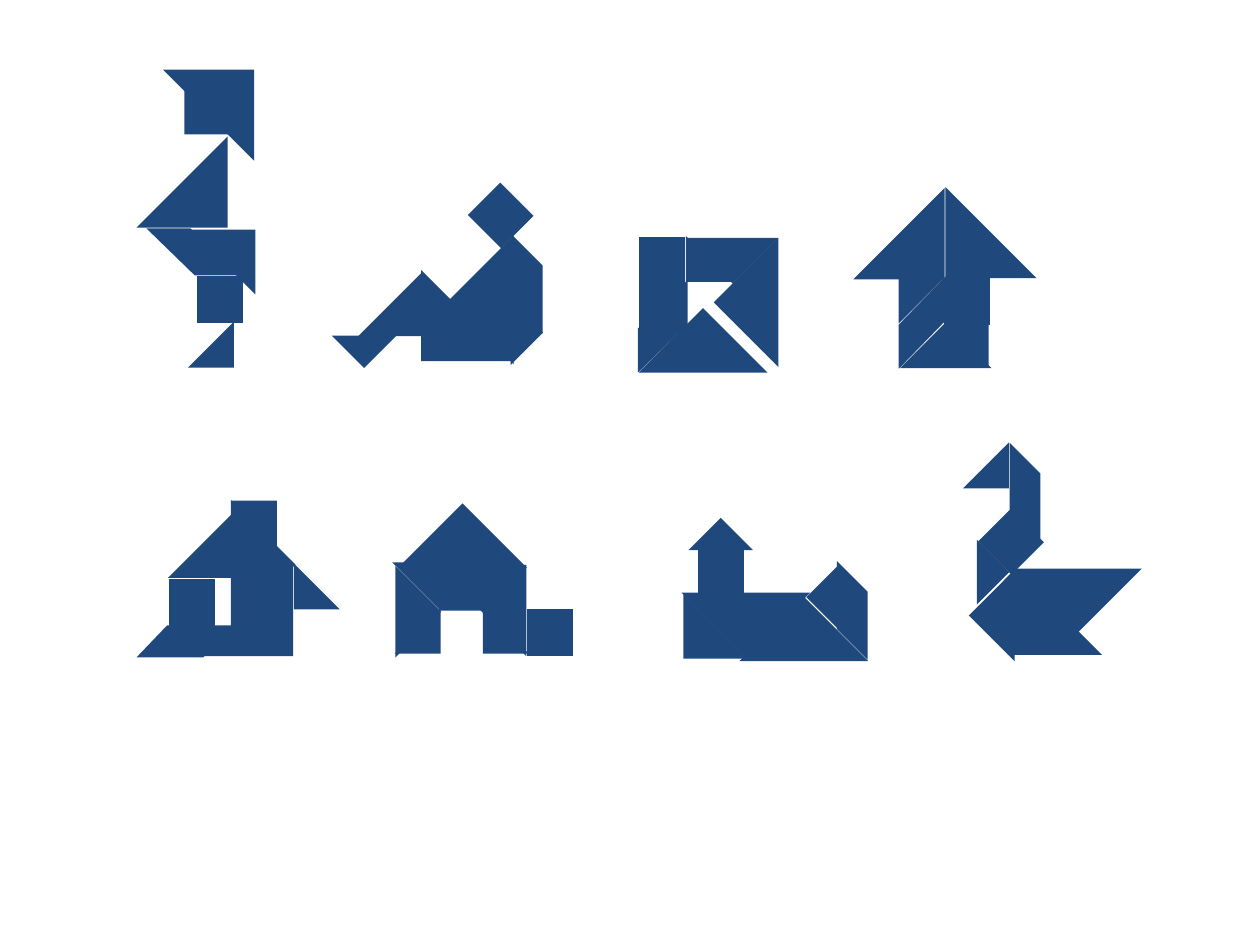
"""Build a slide of eight tangram figures, each made of seven pieces."""
from dataclasses import dataclass
from enum import Enum
from typing import NamedTuple, Union

from lxml.etree import SubElement
from pptx import Presentation
from pptx.dml.color import RGBColor
from pptx.enum.shapes import MSO_SHAPE
from pptx.oxml.ns import qn
from pptx.shapes.autoshape import Shape
from pptx.util import Inches, Pt


@dataclass(frozen=True)
class Theme:
    """Colour and outline shared by all pieces."""
    piece: RGBColor = RGBColor(0x1F, 0x49, 0x7D)
    outline: Pt = Pt(1)


class Tan(Enum):
    """Preset outline, width and height of a tangram piece."""
    LARGE = (MSO_SHAPE.RIGHT_TRIANGLE, 0.7, 0.7)
    MEDIUM = (MSO_SHAPE.RIGHT_TRIANGLE, 0.49, 0.49)
    SMALL = (MSO_SHAPE.RIGHT_TRIANGLE, 0.34, 0.34)
    SQUARE = (MSO_SHAPE.RECTANGLE, 0.35, 0.36)


class Piece(NamedTuple):
    """A triangle or square with its place and turn."""
    tan: Tan
    left: float
    top: float
    rotation: int = 0
    flipped: bool = False


class Parallelogram(NamedTuple):
    """The slanted piece, given by its corners."""
    corners: tuple[tuple[float, float], ...]


Figure = list[Union[Piece, Parallelogram]]

THEME = Theme()

SITTING_PERSON: Figure = [
    Piece(Tan.LARGE, 3.72, 2.03, 45),
    Piece(Tan.SMALL, 2.72, 2.5, 45, True),
    Piece(Tan.SQUARE, 3.8, 1.53, 315),
    Piece(Tan.MEDIUM, 2.86, 2.17, 270),
    Piece(Tan.LARGE, 3.35, 2.16),
    Piece(Tan.SMALL, 3.89, 2.47, 225),
    Parallelogram(((4.3, 2.63), (4.3, 2.11), (4.07, 1.88), (4.07, 2.4))),
]
STANDING_PERSON: Figure = [
    Piece(Tan.SQUARE, 1.57, 2.2),
    Piece(Tan.LARGE, 1.31, 0.56, 180),
    Piece(Tan.MEDIUM, 1.53, 1.83, 180),
    Piece(Tan.LARGE, 1.1, 1.1, 270),
    Piece(Tan.SMALL, 1.47, 0.72),
    Piece(Tan.SMALL, 1.51, 2.57, 0, True),
    Parallelogram(((1.18, 1.82), (1.55, 2.18), (1.88, 2.18), (1.51, 1.82))),
]
FRAMED_ARROW: Figure = [
    Piece(Tan.SQUARE, 5.08, 1.89),
    Piece(Tan.LARGE, 5.82, 2.05, 45),
    Piece(Tan.MEDIUM, 5.57, 1.65, 315),
    Piece(Tan.LARGE, 5.23, 2.6, 135),
    Piece(Tan.SMALL, 5.45, 1.89),
    Piece(Tan.SMALL, 5.08, 2.26, 180, True),
    Parallelogram(((5.07, 2.94), (5.45, 2.57), (5.45, 2.24), (5.07, 2.61))),
]
UP_ARROW: Figure = [
    Piece(Tan.MEDIUM, 7.26, 2.67, 225, True),
    Piece(Tan.SQUARE, 7.5, 2.21),
    Piece(Tan.LARGE, 7.51, 1.5),
    Piece(Tan.LARGE, 6.79, 1.51, 270),
    Piece(Tan.SMALL, 7.5, 2.56, 180),
    Piece(Tan.SMALL, 7.14, 2.21, 180, True),
    Parallelogram(((7.14, 2.91), (7.5, 2.54), (7.5, 2.21), (7.14, 2.58))),
]
CHIMNEY_HOUSE: Figure = [
    Piece(Tan.MEDIUM, 1.35, 4.09, 0, True),
    Piece(Tan.SQUARE, 1.35, 4.6),
    Piece(Tan.LARGE, 1.49, 4.13, 225),
    Piece(Tan.LARGE, 1.62, 4.5, 270),
    Piece(Tan.SMALL, 1.85, 3.98, 180),
    Piece(Tan.SMALL, 2.34, 4.49, 90, True),
    Parallelogram(((1.1, 5.21), (1.61, 5.21), (1.85, 4.97), (1.33, 4.97))),
]
GATE_HOUSE: Figure = [
    Piece(Tan.SQUARE, 4.19, 4.84),
    Piece(Tan.LARGE, 3.32, 4.15, 135),
    Piece(Tan.LARGE, 3.47, 4.49, 180),
    Piece(Tan.SMALL, 3.15, 4.84, 270),
    Piece(Tan.SMALL, 3.84, 4.84, 90, True),
    Parallelogram(((3.13, 4.47), (3.5, 4.84), (3.83, 4.84), (3.46, 4.47))),
]
GATE_HOUSE_WALL = Piece(Tan.MEDIUM, 2.9, 4.61, 315, True)
CHURCH: Figure = [
    Piece(Tan.LARGE, 6.03, 4.89, 225, True),
    Piece(Tan.MEDIUM, 5.43, 4.73, 90, True),
    Piece(Tan.SQUARE, 5.55, 4.35),
    Piece(Tan.LARGE, 5.57, 4.36, 45, True),
    Piece(Tan.SMALL, 5.55, 4.19, 135),
    Piece(Tan.SMALL, 6.48, 4.57, 135, True),
    Parallelogram(((6.65, 4.47), (6.65, 4.99), (6.88, 5.22), (6.88, 4.7))),
]
SWAN: Figure = [
    Piece(Tan.SQUARE, 7.85, 4.12, 315),
    Piece(Tan.LARGE, 8.2, 4.17, 45, True),
    Piece(Tan.LARGE, 8.03, 4.49, 90, True),
    Piece(Tan.SMALL, 7.66, 3.53, 270),
    Piece(Tan.SMALL, 7.59, 4.37, 225),
    Parallelogram(((8.02, 4.04), (8.25, 4.28), (8.25, 3.76), (8.02, 3.53))),
    Piece(Tan.MEDIUM, 7.8, 4.64, 45),
]


def paint(shape: Shape) -> None:
    """Give a piece its fill and a sharp-cornered outline."""
    shape.shadow.inherit = False
    shape.fill.solid()
    shape.fill.fore_color.rgb = THEME.piece
    shape.line.color.rgb = THEME.piece
    shape.line.width = THEME.outline
    outline = shape.element.spPr.find(qn("a:ln"))
    SubElement(outline, qn("a:miter"), lim="800000")


def draw_piece(shapes, piece: Piece) -> None:
    """Draw a triangle or square."""
    preset, width, height = piece.tan.value
    shape = shapes.add_shape(preset, Inches(piece.left), Inches(piece.top),
                             Inches(width), Inches(height))
    shape.rotation = piece.rotation
    if piece.flipped:
        shape.element.spPr.find(qn("a:xfrm")).set("flipH", "1")
    paint(shape)


def draw_parallelogram(shapes, piece: Parallelogram) -> None:
    """Draw the slanted piece through its corners."""
    start, *others = [(Inches(x), Inches(y)) for x, y in piece.corners]
    outline = shapes.build_freeform(*start)
    outline.add_line_segments(others, close=True)
    paint(outline.convert_to_shape())


def draw_figure(shapes, figure: Figure) -> None:
    """Draw the pieces of one figure as a group."""
    group = shapes.add_group_shape()
    for piece in figure:
        if isinstance(piece, Parallelogram):
            draw_parallelogram(group.shapes, piece)
        else:
            draw_piece(group.shapes, piece)


def main() -> None:
    """Build and save the slide."""
    presentation = Presentation()
    presentation.slide_width = Inches(10)
    presentation.slide_height = Inches(7.5)
    slide = presentation.slides.add_slide(presentation.slide_layouts[6])
    for figure in (SITTING_PERSON, STANDING_PERSON, FRAMED_ARROW, UP_ARROW,
                   CHIMNEY_HOUSE, GATE_HOUSE):
        draw_figure(slide.shapes, figure)
    draw_piece(slide.shapes, GATE_HOUSE_WALL)
    for figure in (CHURCH, SWAN):
        draw_figure(slide.shapes, figure)
    presentation.save("out.pptx")


if __name__ == "__main__":
    main()
